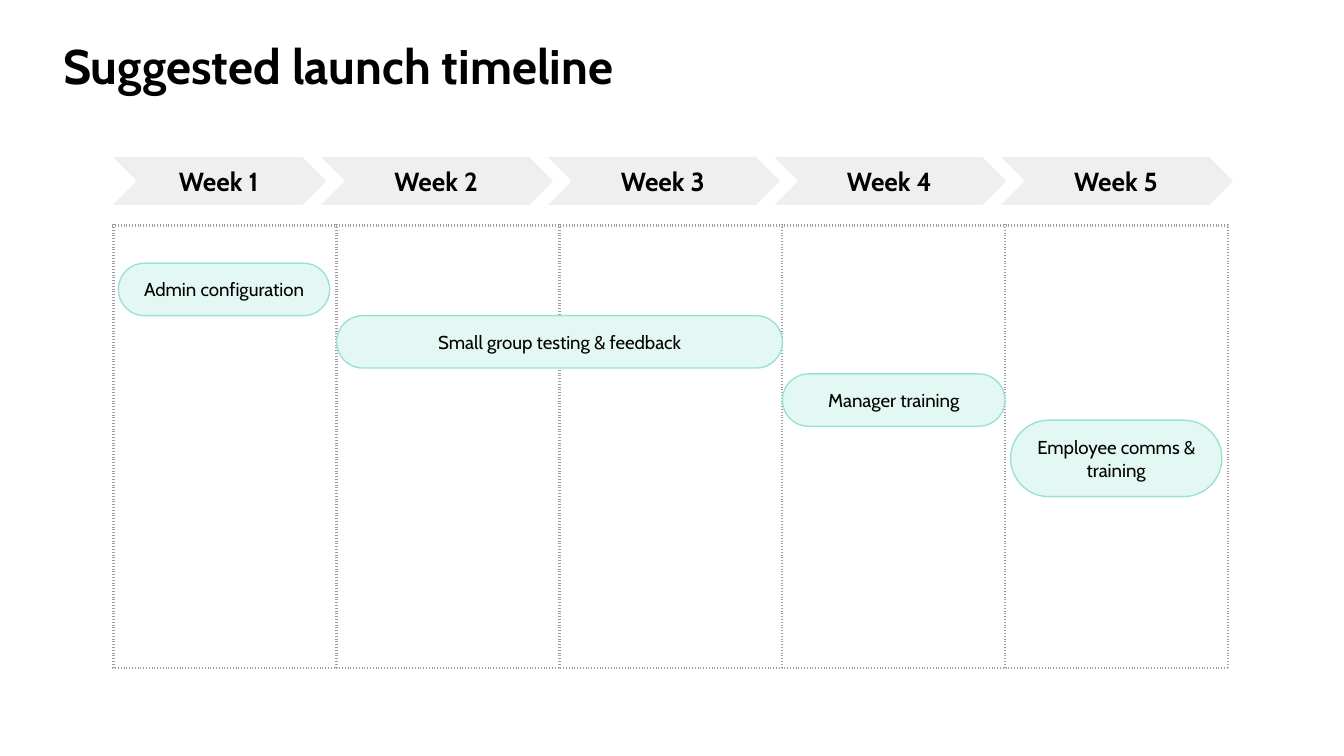
from dataclasses import dataclass

import pptx
import pptx.dml.color
import pptx.enum.shapes
import pptx.enum.text
import pptx.oxml
import pptx.oxml.ns
import pptx.util
from lxml import etree

Pt = pptx.util.Pt
Align = pptx.enum.text.PP_ALIGN
Anchor = pptx.enum.text.MSO_ANCHOR
ShapeType = pptx.enum.shapes.MSO_SHAPE


@dataclass(frozen=True)
class Theme:
    font: str = "Cabin"
    text: str = "000000"
    white: str = "FFFFFF"
    week_fill: str = "EFEFEF"
    task_fill: str = "E3F7F3"
    task_line: str = "9AE2D6"
    grid_line: str = "9E9E9E"
    title_size: float = 26
    week_size: float = 14
    task_size: float = 10
    inset: float = 7.2


@dataclass(frozen=True)
class Box:
    left: float
    top: float
    width: float
    height: float


@dataclass(frozen=True)
class Style:
    shape_type: int
    fill: str
    line: str
    line_width: float
    size: float
    bold: bool


@dataclass(frozen=True)
class Item:
    text: str
    box: Box


THEME = Theme()
WEEK_STYLE = Style(ShapeType.CHEVRON, THEME.week_fill, THEME.white, 2.25, THEME.week_size, True)
TASK_STYLE = Style(ShapeType.ROUNDED_RECTANGLE, THEME.task_fill, THEME.task_line, 0.75, THEME.task_size, False)

WEEK_COUNT = 5
WEEK_STEP = 121.4
GRID = Box(60.9, 120.8, 597, 237)
TITLE = Item("Suggested launch timeline", Box(26.6, 12.2, 650, 41))
WEEKS = [Item("Week 1", Box(57.6, 83, 119, 28))] + [
    Item(f"Week {index + 2}", Box(169.2 + index * WEEK_STEP, 83, 128.9, 28))
    for index in range(WEEK_COUNT - 1)
]
TASKS = [
    Item("Admin configuration", Box(63.4, 141, 113.2, 28.1)),
    Item("Small group testing & feedback", Box(180.4, 169.1, 238.8, 28.1)),
    Item("Manager training", Box(419.2, 200.3, 119.2, 28.1)),
    Item("Employee comms & training", Box(541.4, 225.1, 113.2, 41)),
]


def color(value: str) -> pptx.dml.color.RGBColor:
    return pptx.dml.color.RGBColor.from_string(value)


def place(shape, box: Box) -> None:
    shape.left, shape.top = Pt(box.left), Pt(box.top)
    shape.width, shape.height = Pt(box.width), Pt(box.height)


def write(shape, text: str, size: float, bold: bool, alignment, anchor) -> None:
    frame = shape.text_frame
    frame.text = text
    frame.word_wrap = True
    frame.auto_size = pptx.enum.text.MSO_AUTO_SIZE.NONE
    frame.vertical_anchor = anchor
    frame.margin_left = frame.margin_right = Pt(THEME.inset)
    frame.margin_top = frame.margin_bottom = Pt(THEME.inset)
    paragraph = frame.paragraphs[0]
    paragraph.alignment = alignment
    paragraph.font.name = THEME.font
    paragraph.font.size = Pt(size)
    paragraph.font.bold = bold
    paragraph.font.color.rgb = color(THEME.text)


def draw_item(slide, item: Item, style: Style) -> None:
    box = item.box
    shape = slide.shapes.add_shape(
        style.shape_type, Pt(box.left), Pt(box.top), Pt(box.width), Pt(box.height)
    )
    shape.adjustments[0] = 0.5
    shape.shadow.inherit = False
    shape.fill.solid()
    shape.fill.fore_color.rgb = color(style.fill)
    shape.line.color.rgb = color(style.line)
    shape.line.width = Pt(style.line_width)
    write(shape, item.text, style.size, style.bold, Align.CENTER, Anchor.MIDDLE)


def add_borders(cell) -> None:
    qualified = pptx.oxml.ns.qn
    properties = cell._tc.get_or_add_tcPr()
    for side in ("a:lnL", "a:lnR", "a:lnT", "a:lnB"):
        line = etree.SubElement(properties, qualified(side), w=str(Pt(1.5)))
        fill = etree.SubElement(line, qualified("a:solidFill"))
        etree.SubElement(fill, qualified("a:srgbClr"), val=THEME.grid_line)
        etree.SubElement(line, qualified("a:prstDash"), val="dot")


def draw_grid(slide, box: Box) -> None:
    table = slide.shapes.add_table(
        1, WEEK_COUNT, Pt(box.left), Pt(box.top), Pt(box.width), Pt(box.height)
    ).table
    table.first_row = table.horz_banding = False
    for column in table.columns:
        column.width = Pt(box.width / WEEK_COUNT)
    for cell in table.iter_cells():
        add_borders(cell)
        cell.fill.solid()
        cell.fill.fore_color.rgb = color(THEME.white)


def main() -> None:
    presentation = pptx.Presentation()
    presentation.slide_width, presentation.slide_height = Pt(720), Pt(405)
    slide = presentation.slides.add_slide(presentation.slide_layouts[5])
    draw_grid(slide, GRID)
    title = slide.shapes.title
    place(title, TITLE.box)
    write(title, TITLE.text, THEME.title_size, True, Align.LEFT, Anchor.TOP)
    for week in WEEKS:
        draw_item(slide, week, WEEK_STYLE)
    for task in TASKS:
        draw_item(slide, task, TASK_STYLE)
    presentation.save("out.pptx")


if __name__ == "__main__":
    main()
